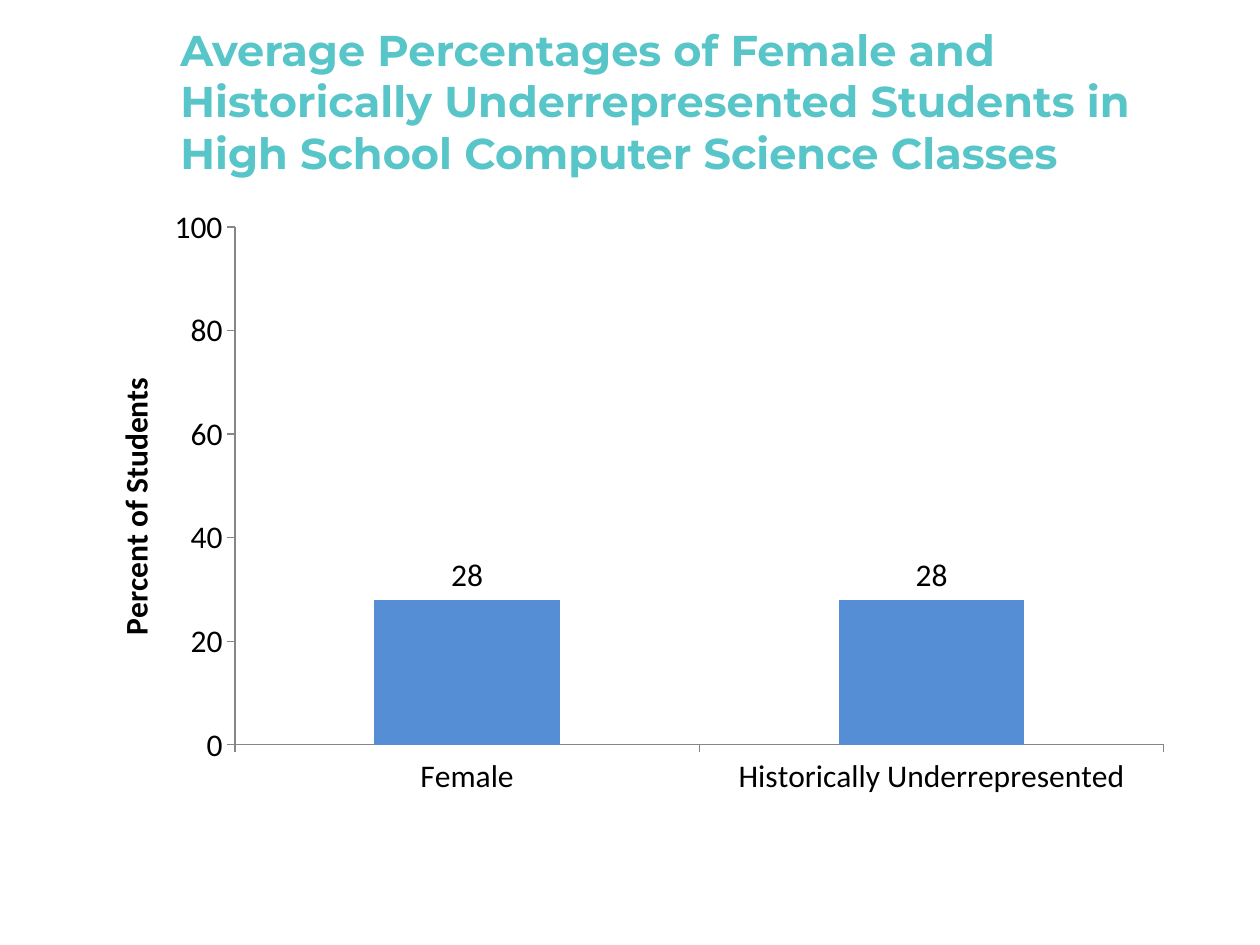
from lxml import etree
from pptx import Presentation, util as u
from pptx.chart.data import CategoryChartData
from pptx.dml.color import RGBColor
from pptx.enum import chart as ch, text
from pptx.oxml import ns

PX = 914400 // 126


def px(*lengths):
    return [u.Emu(length * PX) for length in lengths]


def color(value):
    return RGBColor.from_string(value)


deck = Presentation()
deck.slide_width, deck.slide_height = px(1260, 945)
page = deck.slides.add_slide(deck.slide_layouts[6])

# Chart
left, top, width, height = 73, 195, 1113, 614
data = CategoryChartData()
data.categories = ["Female", "Historically Underrepresented"]
data.add_series("Series 1", [28, 28])
chart = page.shapes.add_chart(
    ch.XL_CHART_TYPE.COLUMN_CLUSTERED, *px(left, top, width, height), data
).chart
chart.has_legend = False
chart.has_title = False
chart.font.name = "Calibri"
chart.font.size = u.Pt(18)
chart.font.color.rgb = color("000000")

plot = chart.plots[0]
plot.gap_width = 150
plot.vary_by_categories = False
plot.has_data_labels = True
labels = plot.data_labels
labels.show_value = True
labels.position = ch.XL_LABEL_POSITION.OUTSIDE_END
bars = plot.series[0].format
bars.fill.solid()
bars.fill.fore_color.rgb = color("558ED5")

for axis in (chart.category_axis, chart.value_axis):
    axis.has_major_gridlines = False
    axis.major_tick_mark = ch.XL_TICK_MARK.OUTSIDE
    axis.minor_tick_mark = ch.XL_TICK_MARK.NONE
    axis.format.line.color.rgb = color("868686")
    axis.format.line.width = u.Pt(0.75)

scale = {"minimum_scale": 0, "maximum_scale": 100, "major_unit": 20}
for name, value in scale.items():
    setattr(chart.value_axis, name, value)

axis_title = chart.value_axis.axis_title
frame = axis_title.text_frame
frame.text = "Percent of Students"
body = frame._txBody.find(ns.qn("a:bodyPr"))
body.set("rot", "-5400000")
body.set("vert", "horz")
axis_font = {"name": "Calibri", "size": u.Pt(18), "bold": True}
for name, value in axis_font.items():
    setattr(frame.paragraphs[0].runs[0].font, name, value)

# Fixed places of the plot and the axis title, as fractions of the chart
plot_place = {
    "layoutTarget": "inner", "xMode": "edge", "yMode": "edge",
    "x": (235 - left) / width, "y": (227 - top) / height,
    "w": 929 / width, "h": 518 / height,
}
title_place = {
    "xMode": "edge", "yMode": "edge",
    "x": (108 - left) / width, "y": (372 - top) / height,
}
plot_area = chart._chartSpace.chart.plotArea
for parent, index, place in (
    (plot_area, 0, plot_place),
    (axis_title._element, 1, title_place),
):
    for old in parent.findall(ns.qn("c:layout")):
        parent.remove(old)
    layout = etree.Element(ns.qn("c:layout"))
    manual = etree.SubElement(layout, ns.qn("c:manualLayout"))
    for name, value in place.items():
        etree.SubElement(manual, ns.qn("c:" + name)).set("val", str(value))
    parent.insert(index, layout)

# Heading
box = page.shapes.add_textbox(*px(168, 22, 1050, 157))
box.text_frame.word_wrap = True
box.text_frame.vertical_anchor = text.MSO_ANCHOR.MIDDLE
para = box.text_frame.paragraphs[0]
span = para.add_run()
span.text = (
    "Average Percentages of Female and Historically Underrepresented "
    "Students in High School Computer Science Classes"
)
heading_font = {"name": "Montserrat", "size": u.Pt(24.6), "bold": True}
for name, value in heading_font.items():
    setattr(span.font, name, value)
span.font.color.rgb = color("58C5C9")

deck.save("out.pptx")
